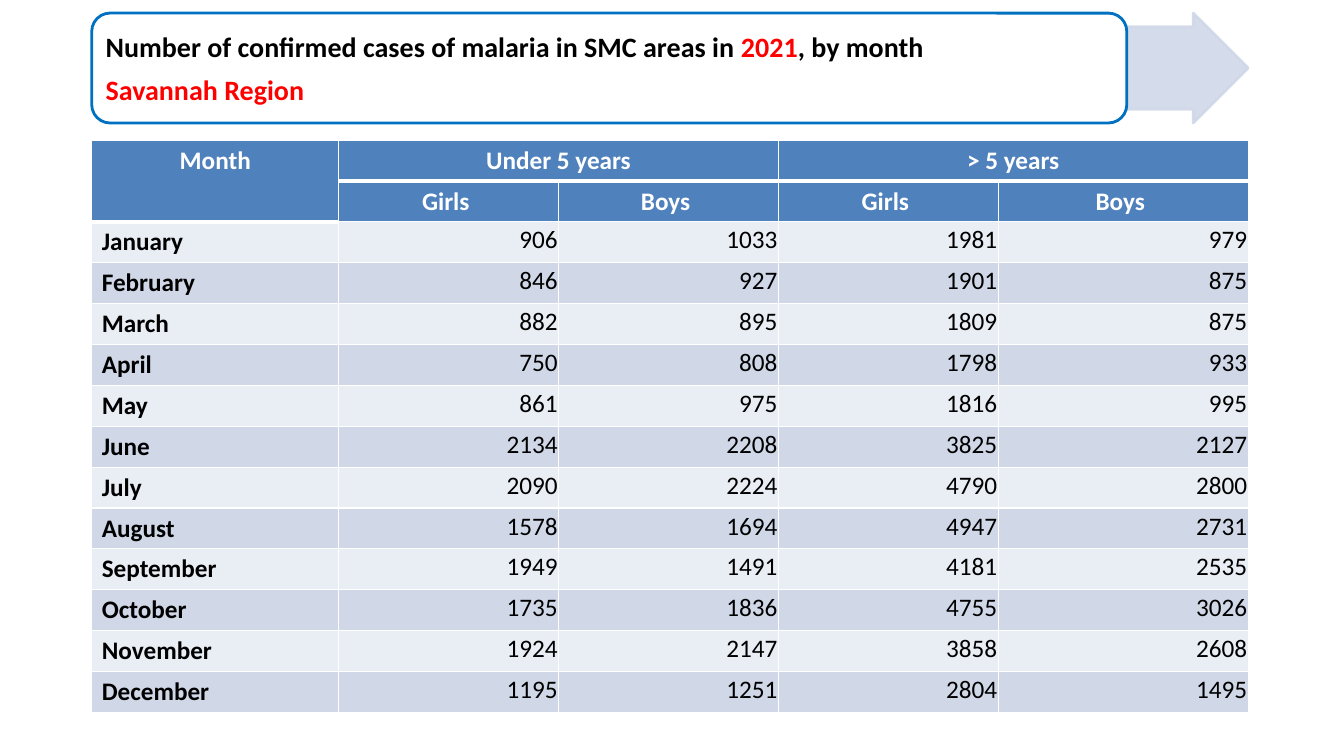
from dataclasses import dataclass

from lxml.etree import SubElement
from pptx import Presentation
from pptx.dml.color import RGBColor as Color
from pptx.enum.shapes import MSO_SHAPE as Preset
from pptx.enum.text import MSO_ANCHOR as Anchor, MSO_AUTO_SIZE as AutoSize, PP_ALIGN as Align
from pptx.oxml.ns import qn
from pptx.util import Inches, Pt


@dataclass(frozen=True)
class Theme:
    font: str = "Calibri"
    title_size: int = 20
    table_size: int = 18
    thin: int = 1
    outline: int = 2
    thick: int = 3
    white: str = "FFFFFF"
    black: str = "000000"
    red: str = "FF0000"
    blue: str = "0070C0"
    header: str = "4F81BD"
    light_band: str = "E9EDF4"
    dark_band: str = "D0D8E8"


@dataclass(frozen=True)
class Box:
    left: float
    top: float
    width: float
    height: float

    def share(self, left, top, width, height):
        return Box(self.left + left * self.width, self.top + top * self.height,
                   width * self.width, height * self.height)

    def lengths(self):
        return [Inches(value) for value in (self.left, self.top, self.width, self.height)]


THEME = Theme()
SLIDE = Box(0, 0, 13.33, 7.5)
BANNER = Box(0.91, 0.13, 11.47, 1.09)
TABLE = Box(0.91, 1.39, 11.47, 5.67)
COLUMN_WIDTHS = (2.45, 2.18, 2.18, 2.18, 2.48)

TITLE = (
    (("Number of confirmed cases of malaria in SMC areas in ", THEME.black),
     ("2021", THEME.red), (", by month", THEME.black)),
    (("Savannah Region", THEME.red),),
)
HEADERS = (
    ("Month", "Under 5 years", "", "> 5 years", ""),
    ("", "Girls ", "Boys ", "Girls ", "Boys "),
)
CASES = (
    ("January", 906, 1033, 1981, 979),
    ("February", 846, 927, 1901, 875),
    ("March", 882, 895, 1809, 875),
    ("April", 750, 808, 1798, 933),
    ("May", 861, 975, 1816, 995),
    ("June", 2134, 2208, 3825, 2127),
    ("July", 2090, 2224, 4790, 2800),
    ("August", 1578, 1694, 4947, 2731),
    ("September", 1949, 1491, 4181, 2535),
    ("October", 1735, 1836, 4755, 3026),
    ("November", 1924, 2147, 3858, 2608),
    ("December", 1195, 1251, 2804, 1495),
)


def format_font(font, size, bold, color=None):
    font.name, font.size, font.bold = THEME.font, Pt(size), bold
    if color:
        font.color.rgb = Color.from_string(color)


def add_panel(slide, preset, box, fill, line):
    shape = slide.shapes.add_shape(preset, *box.lengths())
    shape.shadow.inherit = False
    shape.fill.solid()
    shape.fill.fore_color.rgb = Color.from_string(fill)
    shape.line.color.rgb = Color.from_string(line)
    shape.line.width = Pt(THEME.outline)
    return shape


def add_banner(slide, box):
    arrow = add_panel(slide, Preset.RIGHT_ARROW, box.share(0.895, 0, 0.105, 1),
                      THEME.dark_band, THEME.dark_band)
    arrow.adjustments[0] = 0.75
    for color in arrow.element.spPr.iter(qn("a:srgbClr")):
        SubElement(color, qn("a:alpha"), val="90000")
    panel = add_panel(slide, Preset.ROUNDED_RECTANGLE, box.share(0, 0, 0.895, 1),
                      THEME.white, THEME.blue)

    title = slide.shapes.title
    panel.element.addnext(title.element)
    title.left, title.top, title.width, title.height = box.share(0.005, 0.05, 0.885, 0.9).lengths()
    frame = title.text_frame
    frame.word_wrap, frame.auto_size = True, AutoSize.NONE
    frame.vertical_anchor = Anchor.MIDDLE
    frame.margin_left = frame.margin_right = Inches(0.08)
    frame.margin_top = frame.margin_bottom = Inches(0.04)
    for index, pieces in enumerate(TITLE):
        paragraph = frame.add_paragraph() if index else frame.paragraphs[0]
        paragraph.alignment = Align.LEFT
        paragraph.space_after = Pt(7)
        format_font(paragraph.font, THEME.title_size, True)
        for text, color in pieces:
            run = paragraph.add_run()
            run.text = text
            run.font.color.rgb = Color.from_string(color)


def set_borders(cell, top, bottom):
    properties = cell._tc.get_or_add_tcPr()
    widths = {"lnL": THEME.thin, "lnR": THEME.thin, "lnT": top, "lnB": bottom}
    for side, width in widths.items():
        line = SubElement(properties, qn(f"a:{side}"), w=str(Pt(width)))
        fill = SubElement(line, qn("a:solidFill"))
        SubElement(fill, qn("a:srgbClr"), val=THEME.white)


def fill_cell(cell, value, row, column):
    is_header = row < len(HEADERS)
    is_number = not is_header and column > 0
    below_top_header = row == 1 and column > 0
    above_rule = row == 0 or (row == 1 and column == 0)
    set_borders(cell, THEME.thick if below_top_header else THEME.thin,
                THEME.thick if above_rule else THEME.thin)
    band = THEME.dark_band if row % 2 else THEME.light_band
    cell.fill.solid()
    cell.fill.fore_color.rgb = Color.from_string(THEME.header if is_header else band)
    cell.text = str(value)
    paragraph = cell.text_frame.paragraphs[0]
    paragraph.alignment = Align.CENTER if is_header else Align.RIGHT if is_number else Align.LEFT
    format_font(paragraph.font, THEME.table_size, not is_number,
                THEME.white if is_header else THEME.black)
    if is_number:
        cell.vertical_anchor = Anchor.MIDDLE
        cell.margin_left = cell.margin_right = cell.margin_top = Inches(0.01)
        cell.margin_bottom = Inches(0.05)


def add_cases_table(slide, box):
    rows = HEADERS + CASES
    table = slide.shapes.add_table(len(rows), len(COLUMN_WIDTHS), *box.lengths()).table
    table.first_row = table.horz_banding = False
    for column, width in zip(table.columns, COLUMN_WIDTHS):
        column.width = Inches(width)
    for row, values in enumerate(rows):
        table.rows[row].height = Inches(box.height / len(rows))
        for column, value in enumerate(values):
            fill_cell(table.cell(row, column), value, row, column)
    table.cell(0, 0).merge(table.cell(1, 0))
    for column in (1, 3):
        table.cell(0, column).merge(table.cell(0, column + 1))


def main():
    presentation = Presentation()
    presentation.slide_width = Inches(SLIDE.width)
    presentation.slide_height = Inches(SLIDE.height)
    slide = presentation.slides.add_slide(presentation.slide_layouts.get_by_name("Title Only"))
    add_cases_table(slide, TABLE)
    add_banner(slide, BANNER)
    presentation.save("out.pptx")


if __name__ == "__main__":
    main()
